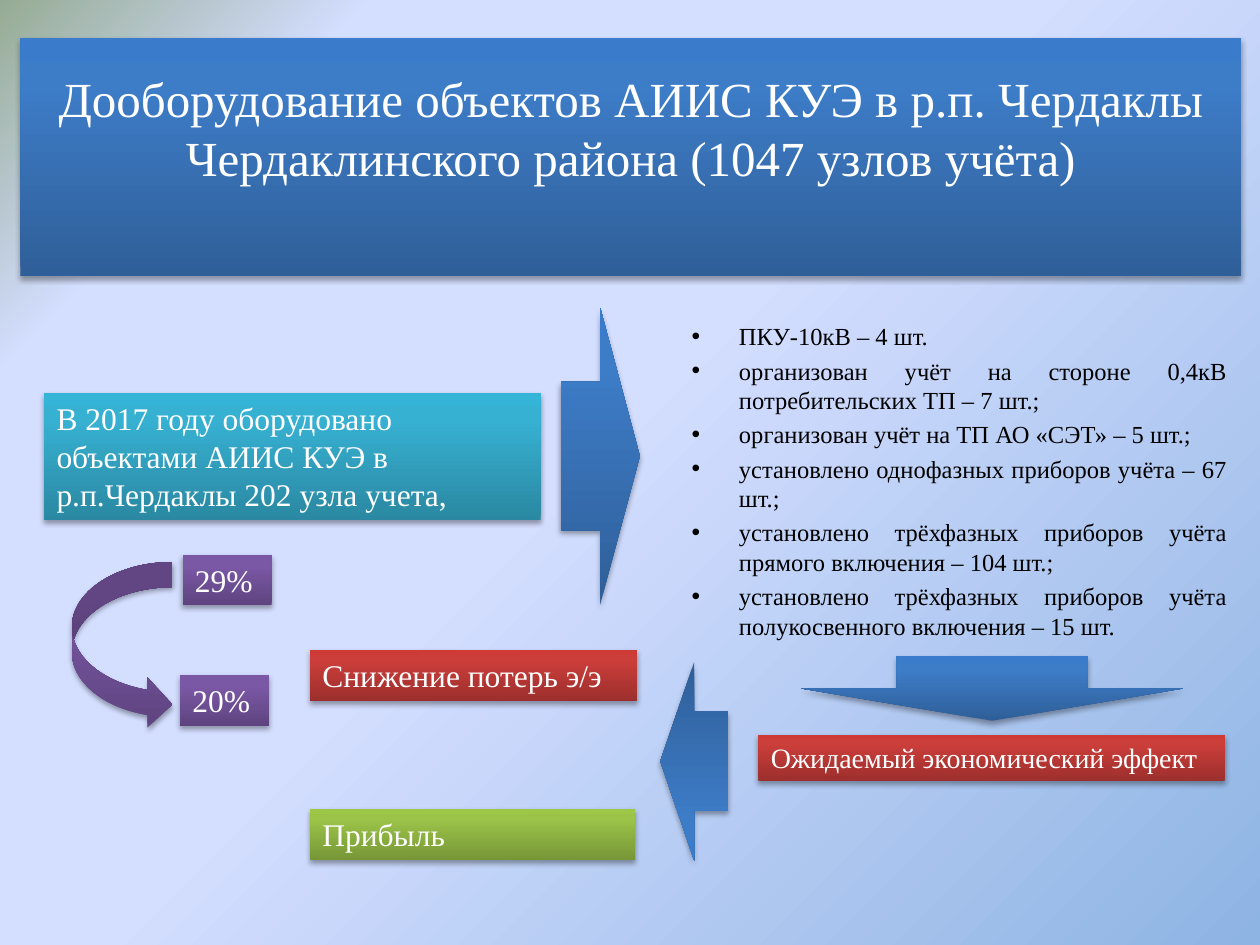
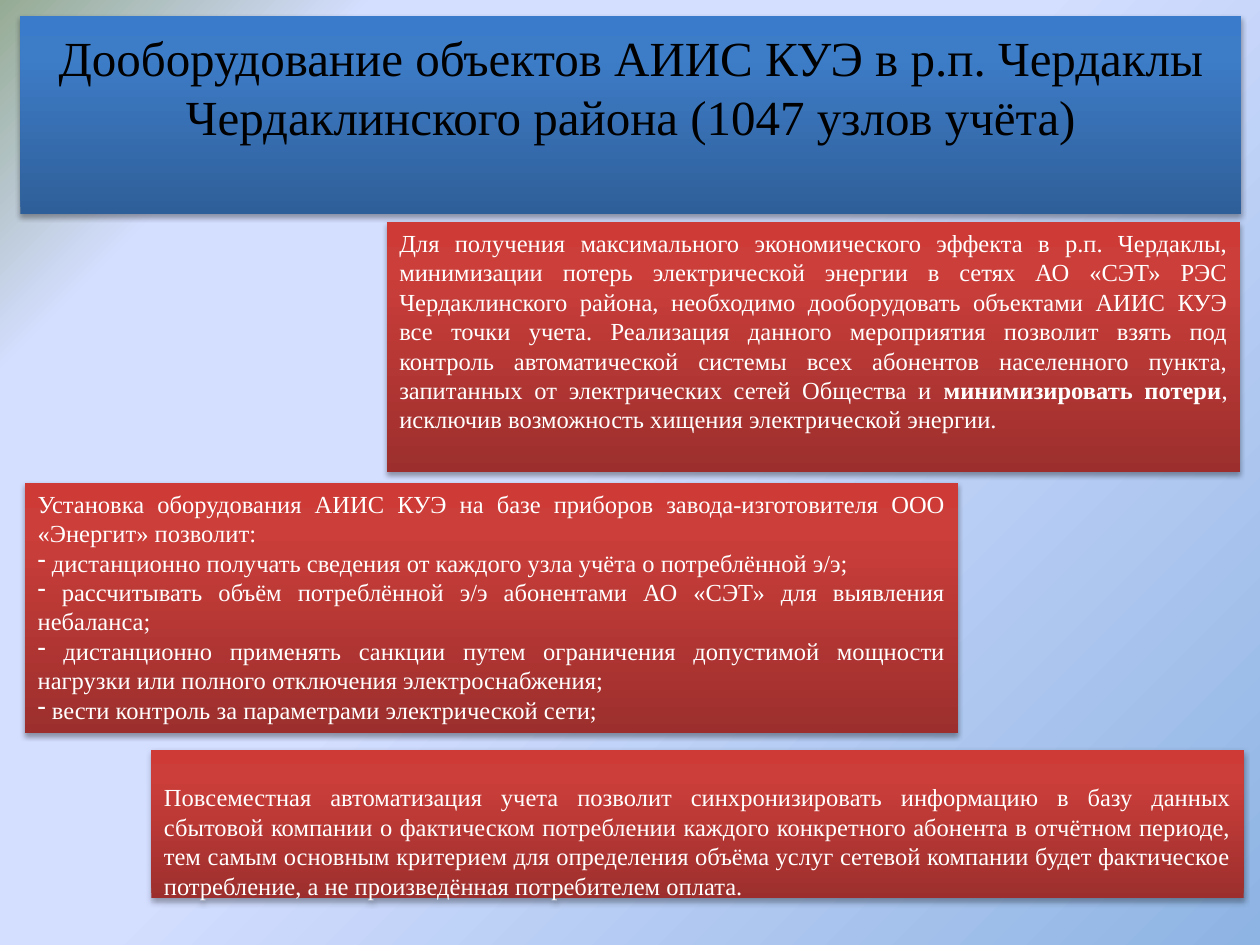
"""Build two slides on metering equipment in the settlement of Cherdakly."""
from pptx import Presentation
from pptx.dml.color import RGBColor as Rgb
from pptx.enum.shapes import MSO_SHAPE as Preset
from pptx.enum.text import MSO_ANCHOR as Anchor, MSO_AUTO_SIZE as AutoSize, PP_ALIGN as Align
from pptx.oxml import parse_xml
from pptx.oxml.ns import nsdecls, qn
from pptx.util import Cm, Pt

TEXT = {"white": "FFFFFF", "black": "000000"}
GRADIENTS = {
    "blue": ("2F5F99", "3D7CC7", "3A7CCB"),
    "teal": ("2A88A2", "37B1D2", "34B4D6"),
    "purple": ("5F4480", "7B58A6", "7C57A8"),
    "red": ("9C2F2D", "CB3E3A", "CE3B37"),
    "green": ("779737", "9BC348", "9DC746"),
    "sky": ("8EB4E3", "D4DEFF", "D4DEFF", "96AB94"),
}
UPWARD = '<a:lin ang="16200000" scaled="0"/>'
FROM_CORNER = '<a:path path="circle"><a:fillToRect l="100000" t="100000"/></a:path>'
HEADING = "Дооборудование объектов АИИС КУЭ в р.п. Чердаклы Чердаклинского района (1047 узлов учёта)"


def gradient(name, stops, direction):
    marks = "".join(
        f'<a:gs pos="{stop * 1000}"><a:srgbClr val="{colour}"/></a:gs>'
        for stop, colour in zip(stops, GRADIENTS[name])
    )
    return parse_xml(
        f'<a:gradFill {nsdecls("a")} rotWithShape="1"><a:gsLst>{marks}</a:gsLst>{direction}</a:gradFill>'
    )


def replace_solid(owner, new_fill):
    owner.replace(owner.find(qn("a:solidFill")), new_fill)


class Deck:
    def __init__(self):
        self.show = Presentation()
        self.show.slide_width, self.show.slide_height = Cm(25.4), Cm(19.05)
        self.font = "Times New Roman"
        self.slide = None
        master = self.show.slide_master
        master.background.fill.solid()
        backdrop = master.element.find(".//" + qn("p:bgPr"))
        replace_solid(backdrop, gradient("sky", (0, 53, 83, 100), FROM_CORNER))

    def new_slide(self):
        self.slide = self.show.slides.add_slide(self.show.slide_layouts[1])

    def place(self, shape, box):
        shape.left, shape.top, shape.width, shape.height = map(Cm, box)

    def paint(self, shape, colour):
        shape.fill.solid()
        replace_solid(shape.element.spPr, gradient(colour, (0, 80, 100), UPWARD))
        shape.line.fill.background()
        shape.shadow.inherit = False
        shape.element.spPr.find(qn("a:effectLst")).append(parse_xml(
            f'<a:outerShdw {nsdecls("a")} blurRad="40000" dist="23000" dir="5400000" rotWithShape="0">'
            '<a:srgbClr val="000000"><a:alpha val="35000"/></a:srgbClr></a:outerShdw>'
        ))

    def set_text(self, shape, lines, size, colour="white", align=Align.LEFT, anchor=Anchor.TOP):
        frame = shape.text_frame
        frame.word_wrap = True
        frame.auto_size = AutoSize.NONE
        frame.vertical_anchor = anchor
        for number, line in enumerate(lines):
            paragraph = frame.add_paragraph() if number else frame.paragraphs[0]
            paragraph.alignment = align
            paragraph.font.name = self.font
            paragraph.font.size = Pt(size)
            paragraph.font.color.rgb = Rgb.from_string(TEXT[colour])
            for part, words in enumerate(line.split("**")):
                run = paragraph.add_run()
                run.text = words
                if part % 2:
                    run.font.bold = True
        return frame

    def title(self, top, height, colour):
        heading = self.slide.shapes.title
        self.place(heading, (0.41, top, 24.61, height))
        self.paint(heading, "blue")
        frame = self.set_text(heading, [HEADING], 28, colour, Align.CENTER, Anchor.MIDDLE)
        frame.margin_bottom = Cm(1.3)

    def body(self, box, lines, colour="black"):
        body = self.slide.placeholders[1]
        self.place(body, box)
        return body, self.set_text(body, lines, 14, colour, Align.JUSTIFY)

    def panel_body(self, box, text, colour):
        body, frame = self.body(box, [text], "white")
        self.paint(body, colour)
        frame.margin_top = Cm(0.66)
        paragraph = frame.paragraphs[0]
        paragraph.space_before = Pt(0)
        self.bullet(paragraph, "<a:buNone {}/>")

    def bullet(self, paragraph, mark):
        properties = paragraph._p.get_or_add_pPr()
        properties.set("marL", "0")
        properties.set("indent", "0")
        properties.find(qn("a:defRPr")).addprevious(parse_xml(mark.format(nsdecls("a"))))

    def figure(self, preset, box, colour, rotation=0):
        figure = self.slide.shapes.add_shape(preset, *map(Cm, box))
        figure.rotation = rotation
        self.paint(figure, colour)
        return figure

    def panel(self, box, colour, lines, size=18, align=Align.LEFT):
        return self.set_text(self.figure(Preset.RECTANGLE, box, colour), lines, size, align=align)


def results_slide(deck):
    deck.new_slide()
    deck.title(0.76, 4.8, "white")
    deck.body((13.69, 6.35, 11.3, 7.16), [
        "ПКУ-10кВ – 4 шт.",
        "организован учёт на стороне 0,4кВ потребительских ТП – 7 шт.;",
        "организован учёт на ТП АО «СЭТ» – 5 шт.;",
        "установлено однофазных приборов учёта – 67 шт.;",
        "установлено трёхфазных приборов учёта прямого включения – 104 шт.;",
        "установлено трёхфазных приборов учёта полукосвенного включения – 15 шт.",
    ])
    for box, colour, text, size in (
        ((0.89, 7.92, 10.01, 2.57), "teal",
         "В 2017 году оборудовано объектами АИИС КУЭ в р.п.Чердаклы 202 узла учета,", 18),
        ((3.68, 11.18, 1.8, 1.02), "purple", "29%", 18),
        ((3.63, 13.61, 1.8, 1.02), "purple", "20%", 18),
        ((15.29, 14.81, 9.4, 0.94), "red", "Ожидаемый экономический эффект", 16),
        ((6.25, 13.11, 6.6, 1.02), "red", "Снижение потерь э/э", 18),
        ((6.25, 16.31, 6.55, 1.02), "green", "Прибыль", 18),
    ):
        deck.panel(box, colour, [text], size)
    deck.figure(Preset.RIGHT_ARROW, (11.3, 6.2, 1.6, 5.99), "blue")
    deck.figure(Preset.DOWN_ARROW, (16.15, 13.23, 7.7, 1.3), "blue")
    deck.figure(Preset.RIGHT_ARROW, (13.31, 13.34, 1.37, 4.01), "blue", 180)
    deck.figure(Preset.CURVED_RIGHT_ARROW, (1.45, 11.33, 2.03, 3.38), "purple")


def benefits_slide(deck):
    deck.new_slide()
    deck.title(0.33, 3.99, "black")
    deck.panel_body(
        (3.05, 15.11, 22.02, 3),
        "Повсеместная автоматизация учета позволит синхронизировать информацию в базу данных "
        "сбытовой компании о фактическом потреблении каждого конкретного абонента в отчётном "
        "периоде, тем самым основным критерием для определения объёма услуг сетевой компании "
        "будет фактическое потребление, а не произведённая потребителем оплата.",
        "red",
    )
    deck.panel((7.8, 4.47, 17.2, 5.05), "red", [
        "Для получения максимального экономического эффекта в р.п. Чердаклы, минимизации потерь "
        "электрической энергии в сетях АО «СЭТ» РЭС Чердаклинского района, необходимо "
        "дооборудовать объектами АИИС КУЭ все точки учета. Реализация данного мероприятия "
        "позволит взять под контроль автоматической системы всех абонентов населенного пункта, "
        "запитанных от электрических сетей Общества и **минимизировать потери**, исключив "
        "возможность хищения электрической энергии.",
    ], 14, Align.JUSTIFY)
    abilities = deck.panel((0.51, 9.73, 18.8, 5.05), "red", [
        "Установка оборудования АИИС КУЭ на базе приборов завода-изготовителя ООО «Энергит» позволит:",
        " дистанционно получать сведения от каждого узла учёта о потреблённой э/э;",
        " рассчитывать объём потреблённой э/э абонентами АО «СЭТ» для выявления небаланса;",
        " дистанционно применять санкции путем ограничения допустимой мощности нагрузки "
        "или полного отключения электроснабжения;",
        " вести контроль за параметрами электрической сети;",
    ], 14, Align.JUSTIFY)
    for ability in abilities.paragraphs[1:]:
        deck.bullet(ability, '<a:buChar {} char="-"/>')


def main():
    deck = Deck()
    results_slide(deck)
    benefits_slide(deck)
    deck.show.save("out.pptx")


if __name__ == "__main__":
    main()
